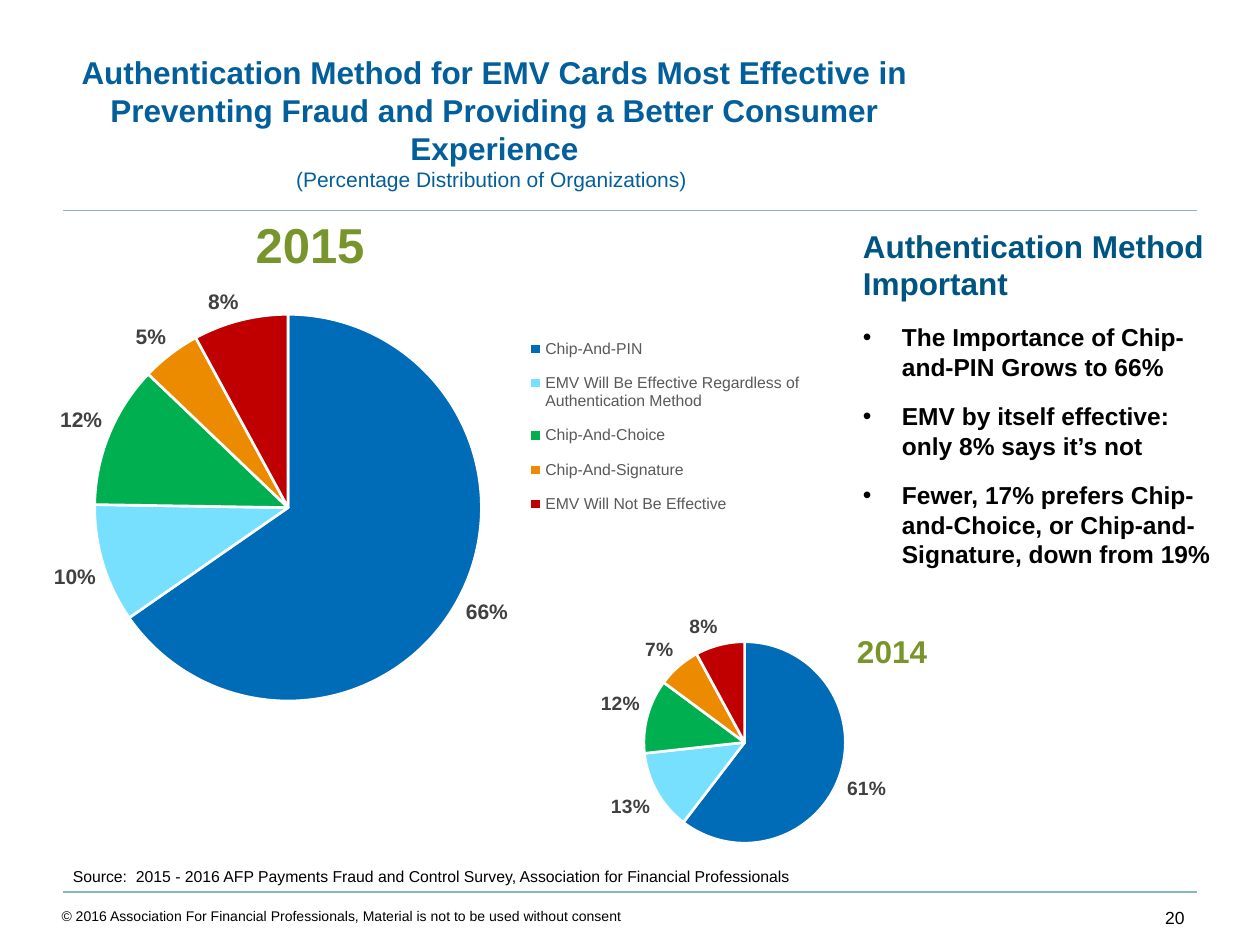
from lxml.etree import SubElement
from pptx import Presentation
from pptx.chart.data import CategoryChartData
from pptx.dml.color import RGBColor
from pptx.enum.chart import XL_CHART_TYPE as CT, XL_LABEL_POSITION as LP, XL_LEGEND_POSITION as LEG
from pptx.enum.shapes import MSO_CONNECTOR as CONN
from pptx.enum.text import MSO_ANCHOR as ANCHOR, MSO_AUTO_SIZE as FIT, PP_ALIGN as AL
from pptx.oxml import parse_xml
from pptx.oxml.ns import nsdecls, qn
from pptx.util import Pt

PX = 9144
SLICES = ["006BB6", "78E0FF", "00B050", "ED8B00", "C00000"]
METHODS = ["Chip-And-PIN", "EMV Will Be Effective Regardless of Authentication Method",
           "Chip-And-Choice", "Chip-And-Signature", "EMV Will Not Be Effective"]
POINTS = ["The Importance of Chip-and-PIN Grows to 66%",
          "EMV by itself effective: only 8% says it’s not",
          "Fewer, 17% prefers Chip-and-Choice, or Chip-and-Signature, down from 19%"]


def px(*values):
    """Turn px lengths into EMU."""
    return [v * PX for v in values]


def rgb(value):
    """Turn a hex string into a colour."""
    return RGBColor.from_string(value)


def set_font(font, size, color, bold=False):
    """Set the attributes of a font."""
    for name, value in {"name": "Arial", "size": Pt(size), "bold": bold}.items():
        setattr(font, name, value)
    font.color.rgb = rgb(color)


def add_para(tf, text, size, color, bold=False, align=AL.LEFT, before=0, bullet=False):
    """Write one paragraph into a text frame and return its run."""
    p = tf.paragraphs[0] if not tf.text else tf.add_paragraph()
    if bullet:
        pPr = p._p.get_or_add_pPr()
        pPr.set("marL", str(31 * PX))
        pPr.set("indent", str(-31 * PX))
        SubElement(pPr, qn("a:buFont")).set("typeface", "Arial")
        SubElement(pPr, qn("a:buChar")).set("char", "•")
    p.alignment = align
    p.space_before = Pt(before)
    r = p.add_run()
    r.text = text
    set_font(r.font, size, color, bold)
    return r


def add_box(s, box, wrap=True):
    """Add a text box and return its text frame."""
    tf = s.shapes.add_textbox(*px(*box)).text_frame
    tf.word_wrap = wrap
    return tf


def add_year(s, box, text, size):
    """Add a year heading with a white text outline."""
    r = add_para(add_box(s, box, False), text, size, "78952C", True, AL.CENTER)
    r._r.get_or_add_rPr().insert(0, parse_xml(
        f'<a:ln {nsdecls("a")} w="9525"><a:solidFill><a:srgbClr val="FFFFFF"/></a:solidFill></a:ln>'))


def add_rule(s, y):
    """Add a horizontal rule across the slide."""
    line = s.shapes.add_connector(CONN.STRAIGHT, *px(50, y, 950, y))
    line.line.color.rgb = rgb("87B8C0")
    line.line.width = Pt(1)
    SubElement(line._element.spPr, qn("a:effectLst"))


def place(element, x, y, w, h, inner=False):
    """Give a chart part a manual layout in fractions of the chart."""
    for old in element.findall(qn("c:layout")):
        element.remove(old)
    target = '<c:layoutTarget val="inner"/>' if inner else ""
    modes = "".join(f'<c:{n}Mode val="edge"/>' for n in "xy")
    sizes = "".join(f'<c:{n} val="{v}"/>' for n, v in zip("xywh", (x, y, w, h)))
    layout = parse_xml(f'<c:layout {nsdecls("c")}><c:manualLayout>{target}{modes}{sizes}'
                       '</c:manualLayout></c:layout>')
    element.insert(0 if inner else 1, layout)


def add_pie(s, box, cats, values, label_size, plot_area):
    """Add a pie chart with percentage labels and return the chart."""
    data = CategoryChartData(number_format="0%")
    data.categories = cats
    data.add_series("Series 1", values)
    chart = s.shapes.add_chart(CT.PIE, *px(*box), data).chart
    chart.has_title = chart.has_legend = False
    set_font(chart.font, 10, "000000")
    plot = chart.plots[0]
    plot.vary_by_categories = True
    for i, color in enumerate(SLICES):
        fmt = plot.series[0].points[i].format
        fmt.fill.solid()
        fmt.fill.fore_color.rgb = rgb(color)
        fmt.line.color.rgb = rgb("FFFFFF")
        fmt.line.width = Pt(1.5)
    labels = plot.series[0].data_labels
    for name, value in {"show_value": True, "show_percentage": False, "number_format": "0%",
                        "number_format_is_linked": False, "position": LP.OUTSIDE_END}.items():
        setattr(labels, name, value)
    set_font(labels.font, label_size, "404040", True)
    place(chart._chartSpace.chart.plotArea, *plot_area, inner=True)
    return chart


def add_legend(chart, area):
    """Add a legend on the right of a chart."""
    chart.has_legend = True
    chart.legend.position = LEG.RIGHT
    chart.legend.include_in_layout = False
    set_font(chart.legend.font, 9, "595959")
    place(chart.legend._element, *area)


def fill_title(s):
    """Move and fill the title placeholder."""
    sp = s.shapes.title
    for name, value in zip(("left", "top", "width", "height"), px(26, 37, 733, 121)):
        setattr(sp, name, value)
    tf = sp.text_frame
    for name, value in {"word_wrap": True, "auto_size": FIT.NONE,
                        "vertical_anchor": ANCHOR.TOP}.items():
        setattr(tf, name, value)
    add_para(tf, "Authentication Method for EMV Cards Most Effective in Preventing Fraud "
             "and Providing a Better Consumer Experience", 18, "035F9B", True, AL.CENTER)
    add_para(tf, "(Percentage Distribution of Organizations) ", 12, "035F9B", align=AL.CENTER)


def add_findings(s):
    """Add the heading and bullets on the right."""
    tf = add_box(s, (675, 175, 300, 286))
    add_para(tf, "Authentication Method Important", 18, "005481", True)
    for text in POINTS:
        add_para(tf, text, 14, "000000", True, before=11.5, bullet=True)


def main():
    """Build the slide."""
    prs = Presentation()
    prs.slide_width, prs.slide_height = px(1000, 750)
    s = prs.slides.add_slide(prs.slide_layouts[5])
    for y in (167, 708):
        add_rule(s, y)
    add_pie(s, (462, 450, 258, 258), ["1", "2", "3", "4", "5"],
            [0.61, 0.13, 0.12, 0.07, 0.08], 11, (0.19, 0.23, 0.62, 0.62))
    fill_title(s)
    add_findings(s)
    add_para(add_box(s, (48, 683, 603, 25)), "Source:  2015 - 2016 AFP Payments Fraud and "
             "Control Survey, Association for Financial Professionals", 9, "000000")
    add_para(add_box(s, (900, 715, 50, 35)), "20", 10, "000000", align=AL.RIGHT)
    add_para(add_box(s, (39, 715, 846, 35)), "© 2016 Association For Financial Professionals, "
             "Material is not to be used without consent", 8, "000000")
    chart = add_pie(s, (25, 204, 617, 379), METHODS,
                    [0.66, 0.1, 0.12, 0.05, 0.08], 12, (0.08, 0.12, 0.5, 0.81))
    add_legend(chart, (0.64, 0.14, 0.35, 0.43))
    add_year(s, (192, 165, 108, 57), "2015", 28)
    add_year(s, (670, 497, 76, 40), "2014", 18)
    prs.save("out.pptx")


if __name__ == "__main__":
    main()
